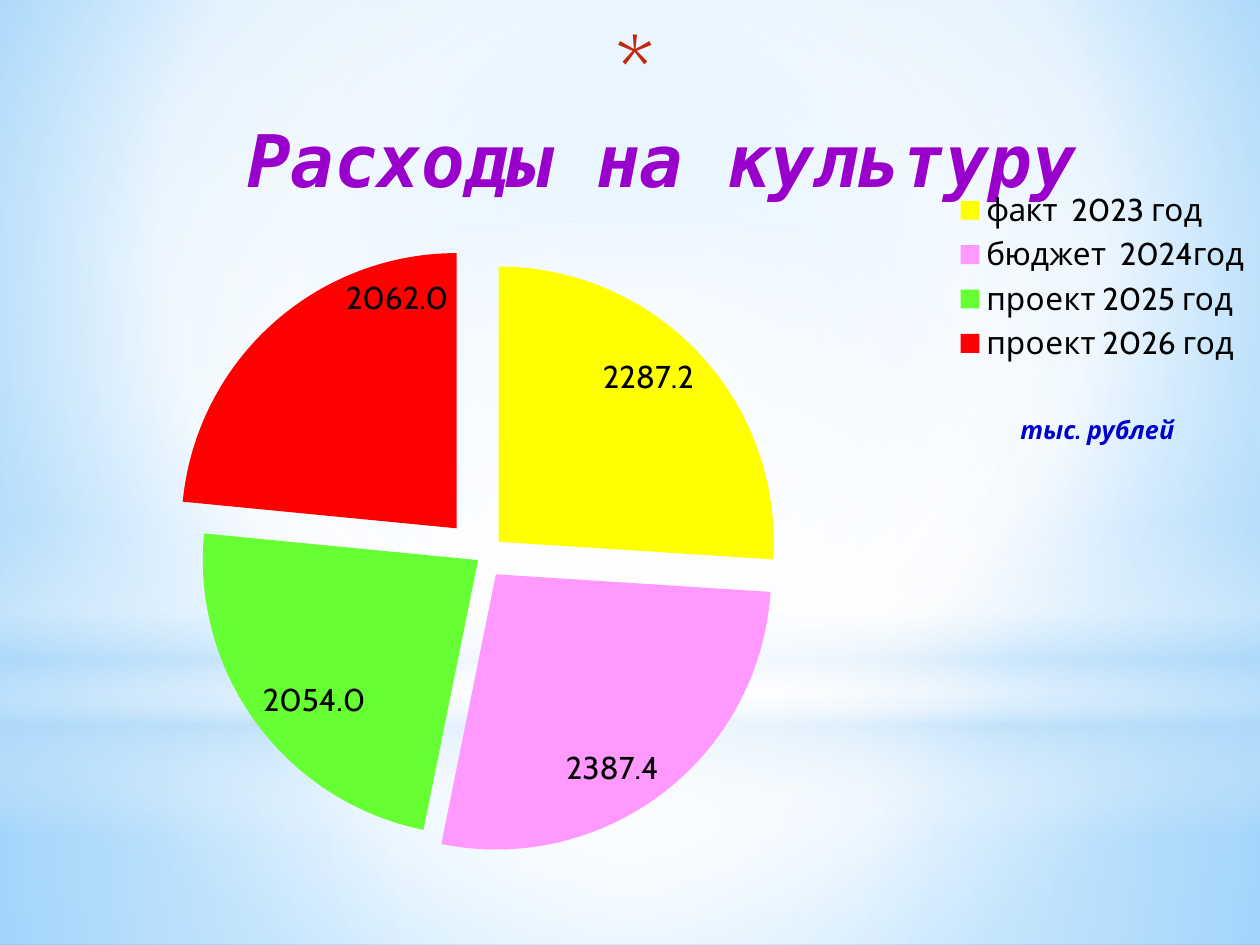
import pptx
import pptx.chart.data
import pptx.dml.color
import pptx.enum.chart
import pptx.enum.shapes
import pptx.enum.text
import pptx.oxml
import pptx.oxml.ns
import pptx.util

Pt = pptx.util.Pt
COLORS = {
    "white": "FFFFFF", "sky": "9ED5FF", "azure": "5BB9FF", "haze": "B4DCFA",
    "star": "C3260C", "title": "9900CC", "unit": "0000CC", "text": "000000",
    "yellow": "FFFF00", "pink": "FF99FF", "green": "66FF33", "red": "FF0000",
}
EXPENSES = [
    ("факт  2023 год", 2287.2, "yellow", 8),
    ("бюджет  2024год", 2387.4, "pink", 8),
    ("проект 2025 год", 2054.0, "green", 2),
    ("проект 2026 год", 2062.0, "red", 14),
]
CENTER = (50, 50, 50, 50)


def rgb(name):
    """Return the named colour."""
    return pptx.dml.color.RGBColor.from_string(COLORS[name])


def manual_layout(x, y, size=None):
    """Return a chart layout element, absolute when a size is given."""
    modes, extent = "", ""
    if size:
        modes = '<c:xMode val="edge"/><c:yMode val="edge"/>'
        extent = f'<c:w val="{size[0]}"/><c:h val="{size[1]}"/>'
    return pptx.oxml.parse_xml(
        f'<c:layout {pptx.oxml.ns.nsdecls("c")}><c:manualLayout>'
        f'{"<c:layoutTarget val=%sinner%s/>" % (chr(34), chr(34)) if size and size[1] > 0.5 else ""}'
        f'{modes}<c:x val="{x}"/><c:y val="{y}"/>{extent}</c:manualLayout></c:layout>')


class Slide:
    """Holds the style and the current page."""

    def __init__(self, deck):
        self.font = "Cabin"
        self.page = deck.slides.add_slide(deck.slide_layouts[6])

    def gradient(self, fill, element, stops, focus=None):
        """Fill an element with a radial gradient, or a vertical one without focus."""
        fill.solid()
        solid = next(element.iter(pptx.oxml.ns.qn("a:solidFill")))
        marks = "".join(
            f'<a:gs pos="{pos * 1000}"><a:srgbClr val="{COLORS[name]}">'
            f'<a:alpha val="{alpha * 1000}"/></a:srgbClr></a:gs>'
            for pos, name, alpha in stops)
        direction = '<a:lin ang="5400000" scaled="0"/>'
        if focus:
            sides = " ".join(f'{side}="{part * 1000}"' for side, part in zip("ltrb", focus))
            direction = f'<a:path path="circle"><a:fillToRect {sides}/></a:path>'
        solid.getparent().replace(solid, pptx.oxml.parse_xml(
            f'<a:gradFill {pptx.oxml.ns.nsdecls("a")} rotWithShape="1">'
            f'<a:gsLst>{marks}</a:gsLst>{direction}</a:gradFill>'))

    def backdrop(self, stops, focus):
        """Fill the page background."""
        self.gradient(self.page.background.fill, self.page._element, stops, focus)

    def glow(self, kind, top, height, stops, focus=None):
        """Add a full-width gradient shape."""
        shape = self.page.shapes.add_shape(kind, 0, Pt(top), Pt(720), Pt(height))
        shape.shadow.inherit = False
        shape.line.fill.background()
        self.gradient(shape.fill, shape._element, stops, focus)

    def text(self, words, left, top, width, height, size, color, font=None, slanted=True):
        """Add one centred line of text."""
        box = self.page.shapes.add_textbox(Pt(left), Pt(top), Pt(width), Pt(height))
        frame = box.text_frame
        frame.word_wrap = True
        frame.margin_left = frame.margin_right = frame.margin_top = frame.margin_bottom = 0
        para = frame.paragraphs[0]
        para.text = words
        para.alignment = pptx.enum.text.PP_ALIGN.CENTER
        para.font.name = font or self.font
        para.font.size = Pt(size)
        para.font.bold = para.font.italic = slanted
        para.font.color.rgb = rgb(color)

    def pie(self, rows, left, top, width, height):
        """Add an exploded pie chart with values and a legend."""
        data = pptx.chart.data.CategoryChartData(number_format="0.0")
        data.categories = [row[0] for row in rows]
        data.add_series("Series 1", [row[1] for row in rows])
        chart = self.page.shapes.add_chart(
            pptx.enum.chart.XL_CHART_TYPE.PIE_EXPLODED,
            Pt(left), Pt(top), Pt(width), Pt(height), data).chart
        chart.has_title = False
        chart.font.name, chart.font.size = self.font, Pt(18)
        chart.font.color.rgb = rgb("text")
        chart.has_legend = True
        legend = chart.legend
        legend.position = pptx.enum.chart.XL_LEGEND_POSITION.RIGHT
        legend.include_in_layout = False
        self.place(legend._element, manual_layout(0.755, 0.05, (0.24, 0.23)), "c:legendPos")
        self.place(chart._chartSpace.chart.plotArea, manual_layout(0.036, 0.085, (0.694, 0.86)))

        plot = chart.plots[0]
        plot.vary_by_categories = True
        series = plot.series[0]
        labels = series.data_labels
        labels.show_value = True
        labels.number_format, labels.number_format_is_linked = "0.0", False
        labels.position = pptx.enum.chart.XL_LABEL_POSITION.INSIDE_END
        for explosion in series._element.findall(pptx.oxml.ns.qn("c:explosion")):
            explosion.set("val", "25")
        for index, (name, value, color, offset) in enumerate(rows):
            fill = series.points[index].format.fill
            fill.solid()
            fill.fore_color.rgb = rgb(color)
            point = series._element.findall(pptx.oxml.ns.qn("c:dPt"))[index]
            point.find(pptx.oxml.ns.qn("c:spPr")).addprevious(pptx.oxml.parse_xml(
                f'<c:explosion {pptx.oxml.ns.nsdecls("c")} val="{offset}"/>'))
        last = series.points[len(rows) - 1].data_label
        last.position = pptx.enum.chart.XL_LABEL_POSITION.INSIDE_END
        self.place(series._element.find(".//" + pptx.oxml.ns.qn("c:dLbl")),
                   manual_layout(0.055, -0.064), "c:idx")

    def place(self, parent, layout, after=None):
        """Set the layout of a chart part."""
        for old in parent.findall(pptx.oxml.ns.qn("c:layout")):
            parent.remove(old)
        if after:
            parent.find(pptx.oxml.ns.qn(after)).addnext(layout)
        else:
            parent.insert(0, layout)


def main():
    """Build the slide."""
    deck = pptx.Presentation()
    deck.slide_width, deck.slide_height = Pt(720), Pt(540)
    slide = Slide(deck)
    rectangle = pptx.enum.shapes.MSO_SHAPE.RECTANGLE
    slide.backdrop([(0, "sky", 100), (60, "white", 100), (100, "azure", 100)], (20, 10, 20, 60))
    slide.glow(rectangle, 402, 138,
               [(0, "white", 91), (37, "white", 76), (100, "haze", 79)], CENTER)
    slide.glow(rectangle, 0, 402,
               [(0, "white", 89), (48, "white", 62), (100, "haze", 79)], CENTER)
    slide.glow(rectangle, 296.6, 180,
               [(0, "white", 0), (29, "white", 30), (45, "haze", 40),
                (55, "white", 26), (65, "haze", 60), (100, "white", 0)])
    slide.glow(pptx.enum.shapes.MSO_SHAPE.OVAL, 126, 402,
               [(0, "white", 100), (56, "white", 0)], CENTER)
    slide.text("*", 333, 7, 60, 64, 53, "star", slanted=False)
    slide.text("Расходы на культуру", 108, 65.5, 540, 50, 41.4, "title", "DejaVu Sans Mono")
    slide.text("тыс. рублей", 567, 237, 120, 20, 14.4, "unit")
    slide.pie(EXPENSES, 0, 82.8, 720, 457.2)
    deck.save("out.pptx")


if __name__ == "__main__":
    main()
